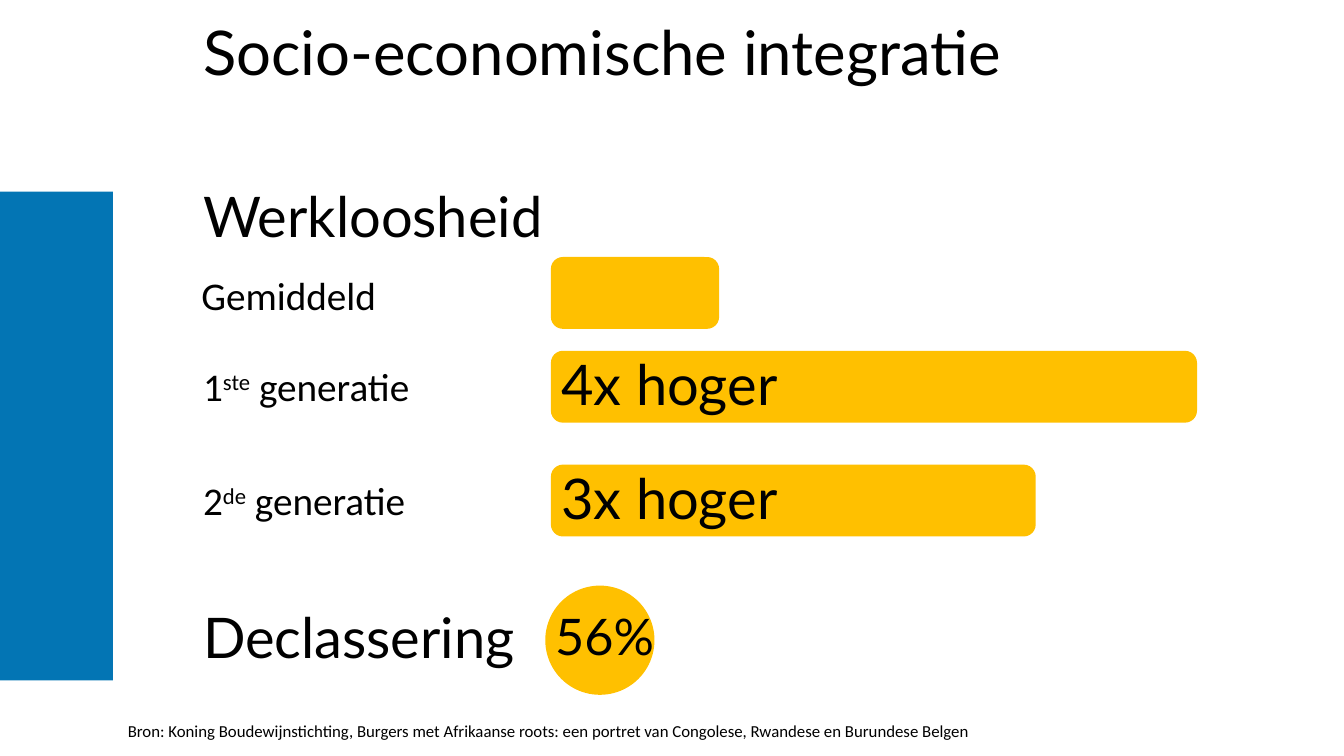
from pptx import Presentation
from pptx.dml.color import RGBColor
from pptx.enum import shapes, text
from pptx.util import Pt

BLUE = RGBColor(0x03, 0x75, 0xB4)
AMBER = RGBColor(0xFF, 0xC0, 0x00)
BLACK = RGBColor(0, 0, 0)

LABEL_LEFT = 138
BAR_LEFT = 393.5
BAR_HEIGHT = 51.3
UNEMPLOYMENT = [
    (183.6, 120.2, ["Gemiddeld"], 136.8, 190, None),
    (250.6, 461.5, ["1", "ste", " generatie"], LABEL_LEFT, 255.6, "4x hoger"),
    (331.9, 346.3, ["2", "de", " generatie"], LABEL_LEFT, 337, "3x hoger"),
]


def add_block(slide, kind, left, top, width, height, color):
    """Add a filled shape without outline."""
    block = slide.shapes.add_shape(kind, Pt(left), Pt(top), Pt(width), Pt(height))
    block.shadow.inherit = False
    block.fill.solid()
    block.fill.fore_color.rgb = color
    block.line.fill.background()


def write(frame, parts, size, font="Lato", spacing=None):
    """Fill a frame with one paragraph; every second part is superscript."""
    paragraph = frame.paragraphs[0]
    paragraph.alignment = text.PP_ALIGN.LEFT
    paragraph.line_spacing = spacing
    for index, part in enumerate(parts):
        run = paragraph.add_run()
        run.text = part
        run.font.size = Pt(size)
        run.font.name = font
        run.font.color.rgb = BLACK
        if index % 2:
            run.font._element.set("baseline", "30000")


def add_text(slide, parts, left, top, width, height, **style):
    """Add a wrapping text box that fits its text."""
    frame = slide.shapes.add_textbox(Pt(left), Pt(top), Pt(width), Pt(height)).text_frame
    frame.word_wrap = True
    frame.auto_size = text.MSO_AUTO_SIZE.SHAPE_TO_FIT_TEXT
    write(frame, parts, **style)


def add_title(slide, wording):
    """Place and format the title placeholder."""
    title = slide.shapes.title
    title.left, title.top, title.width, title.height = Pt(LABEL_LEFT), Pt(0), Pt(786), Pt(80)
    title.text_frame.vertical_anchor = text.MSO_ANCHOR.MIDDLE
    title.text_frame.word_wrap = True
    write(title.text_frame, [wording], size=44, spacing=0.9)


def add_unemployment_row(slide, top, width, label, label_left, label_top, value):
    """Add one bar with its label and, if given, its value."""
    add_block(slide, shapes.MSO_SHAPE.ROUNDED_RECTANGLE, BAR_LEFT, top, width, BAR_HEIGHT, AMBER)
    add_text(slide, label, label_left, label_top, 256, 41, size=28, font="Calibri")
    if value:
        add_text(slide, [value], BAR_LEFT + 0.5, top - 4.3, 446, 55.7, size=40)


def main():
    """Build the slide and save it."""
    deck = Presentation()
    deck.slide_width, deck.slide_height = Pt(960), Pt(540)
    slide = deck.slides.add_slide(deck.slide_layouts[5])

    add_block(slide, shapes.MSO_SHAPE.RECTANGLE, 0, 136.8, 80.6, 349.2, BLUE)
    add_title(slide, "Socio-economische integratie")

    add_text(slide, ["Werkloosheid"], LABEL_LEFT, 126, 538.5, 55.7, size=40)
    for row in UNEMPLOYMENT:
        add_unemployment_row(slide, *row)

    add_text(slide, ["Declassering"], LABEL_LEFT, 426.5, 271.5, 55.7, size=40)
    add_block(slide, shapes.MSO_SHAPE.OVAL, 389.5, 418.3, 78, 78, AMBER)
    add_text(slide, ["56%"], 389.5, 429, 89.3, 51, size=36)

    source = (
        "Bron: Koning Boudewijnstichting, Burgers met Afrikaanse roots: "
        "een portret van Congolese, Rwandese en Burundese Belgen"
    )
    add_text(slide, [source], 84.2, 511.2, 840, 21.8, size=12, font="Calibri")
    deck.save("out.pptx")


if __name__ == "__main__":
    main()
